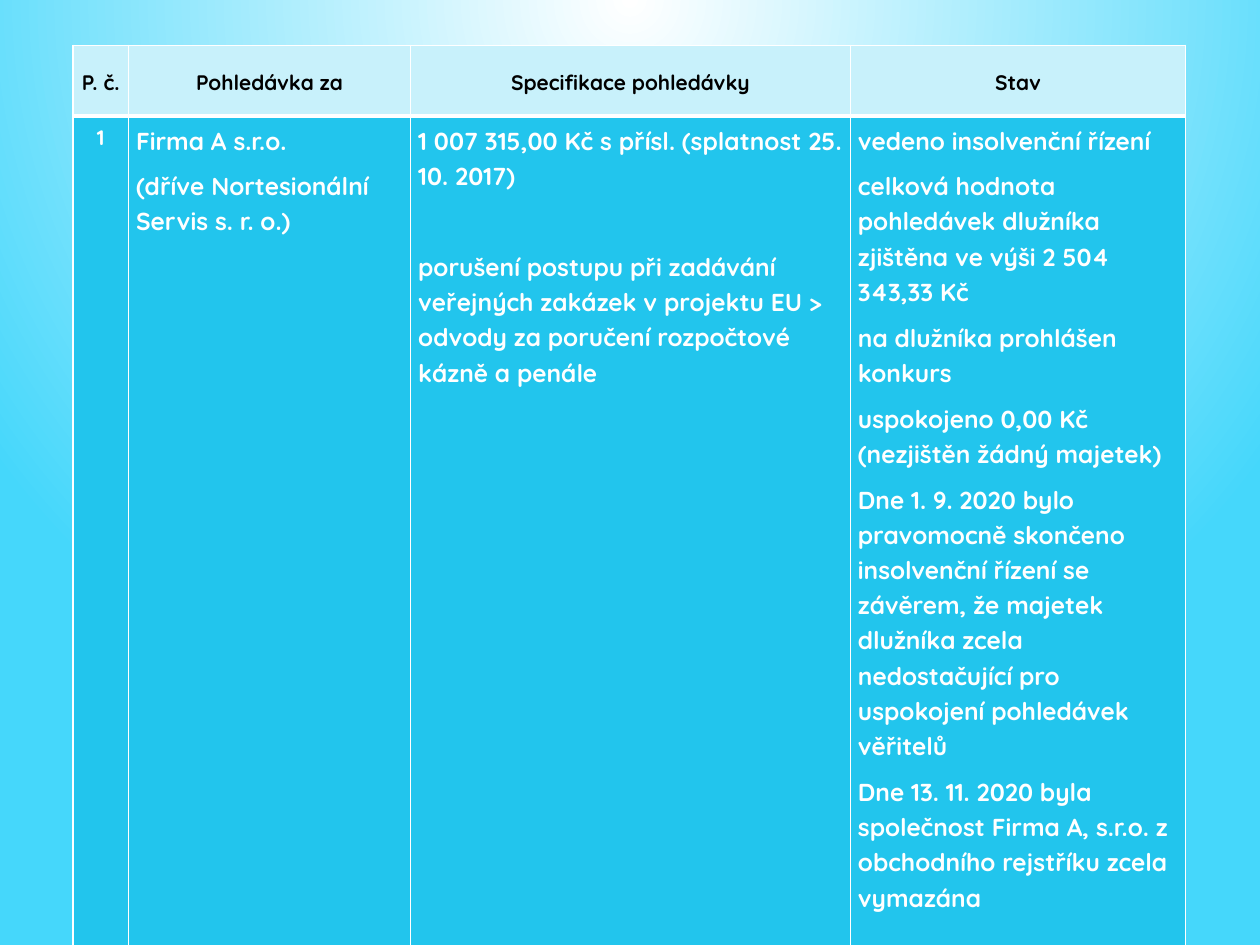
from lxml.etree import SubElement
from pptx import Presentation
from pptx.dml.color import RGBColor
from pptx.enum.text import MSO_ANCHOR, PP_ALIGN
from pptx.oxml.ns import qn
from pptx.util import Inches, Pt

WHITE = RGBColor(0xFF, 0xFF, 0xFF)
BLACK = RGBColor(0, 0, 0)
SKY = RGBColor(0x45, 0xD7, 0xFB)
HEADER_FILL = RGBColor(0xC8, 0xF1, 0xFB)
BODY_FILL = RGBColor(0x22, 0xC5, 0xED)

HEADERS = ["P. č.", "Pohledávka za", "Specifikace pohledávky", "Stav"]
CLAIM = [
    ["1"],
    ["Firma A s.r.o.", "(dříve Nortesionální Servis s. r. o.)"],
    [
        "1 007 315,00 Kč s přísl. (splatnost 25. 10. 2017)",
        "porušení postupu při zadávání veřejných zakázek v projektu EU > "
        "odvody za poručení rozpočtové kázně a penále",
    ],
    [
        "vedeno insolvenční řízení",
        "celková hodnota pohledávek dlužníka zjištěna ve výši 2 504 343,33 Kč",
        "na dlužníka prohlášen konkurs",
        "uspokojeno 0,00 Kč (nezjištěn žádný majetek)",
        "Dne 1. 9. 2020 bylo pravomocně skončeno insolvenční řízení se závěrem, "
        "že majetek dlužníka zcela nedostačující pro uspokojení pohledávek věřitelů",
        "Dne 13. 11. 2020 byla společnost Firma A, s.r.o. z obchodního rejstříku "
        "zcela vymazána",
    ],
]
COLUMN_WIDTHS = [0.44, 2.24, 3.49, 2.66]
ROW_HEIGHTS = [0.56, 6.6]
NUMBER_COLUMN, SPECIFICATION_COLUMN = 0, 2


def paint_background(slide):
    """Radial gradient spreading from the middle of the top edge."""
    fill = slide.background.fill
    fill.gradient()
    for stop, color in zip(fill.gradient_stops, (WHITE, SKY)):
        stop.color.rgb = color
    gradient = next(slide._element.iter(qn("a:gradFill")))
    linear = gradient.find(qn("a:lin"))
    circle = gradient.makeelement(qn("a:path"), {"path": "circle"})
    SubElement(circle, qn("a:fillToRect"), l="0", t="0", r="0", b="100000")
    gradient.replace(linear, circle)


def set_borders(cell, **widths):
    """White borders with widths in points; they must precede the cell fill."""
    properties = cell._tc.get_or_add_tcPr()
    for position, (side, width) in enumerate(widths.items()):
        line = properties.makeelement(qn(f"a:{side}"), {"w": str(Pt(width))})
        solid = SubElement(line, qn("a:solidFill"))
        SubElement(solid, qn("a:srgbClr"), val=str(WHITE))
        properties.insert(position, line)


def fill_cell(cell, paragraphs, size, color, background, alignment, gap=6):
    """Write the paragraphs; gap is the space before each later one."""
    cell.fill.solid()
    cell.fill.fore_color.rgb = background
    cell.margin_left = cell.margin_right = Inches(0.06)
    cell.margin_top = cell.margin_bottom = Inches(0.04)
    frame = cell.text_frame
    for index, text in enumerate(paragraphs):
        paragraph = frame.add_paragraph() if index else frame.paragraphs[0]
        paragraph.alignment = alignment
        paragraph.line_spacing = 1.15
        paragraph.space_before = Pt(gap if index else 6)
        run = paragraph.add_run()
        run.text = text
        run.font.name = "Quicksand"
        run.font.size = Pt(size)
        run.font.bold = True
        run.font.color.rgb = color


def add_claims_table(slide):
    frame = slide.shapes.add_table(
        len(ROW_HEIGHTS), len(COLUMN_WIDTHS), Inches(0.58), Inches(0.36),
        Inches(sum(COLUMN_WIDTHS)), Inches(sum(ROW_HEIGHTS)))
    table = frame.table
    for column, width in zip(table.columns, COLUMN_WIDTHS):
        column.width = Inches(width)
    for row, height in zip(table.rows, ROW_HEIGHTS):
        row.height = Inches(height)

    for index, (header, paragraphs) in enumerate(zip(HEADERS, CLAIM)):
        cell = table.cell(0, index)
        fill_cell(cell, [header], 12, BLACK, HEADER_FILL, PP_ALIGN.CENTER)
        cell.vertical_anchor = MSO_ANCHOR.MIDDLE
        set_borders(cell, lnL=1, lnR=1, lnT=1, lnB=3)

        is_number = index == NUMBER_COLUMN
        cell = table.cell(1, index)
        fill_cell(cell, paragraphs, 12 if is_number else 14, WHITE, BODY_FILL,
                  PP_ALIGN.CENTER if is_number else PP_ALIGN.LEFT,
                  gap=32 if index == SPECIFICATION_COLUMN else 6)
        set_borders(cell, lnL=1, lnR=1, lnT=3, lnB=1)


def main():
    presentation = Presentation()
    presentation.slide_width = Inches(10)
    presentation.slide_height = Inches(7.5)
    slide = presentation.slides.add_slide(presentation.slide_layouts[6])
    paint_background(slide)
    add_claims_table(slide)
    presentation.save("out.pptx")


if __name__ == "__main__":
    main()
